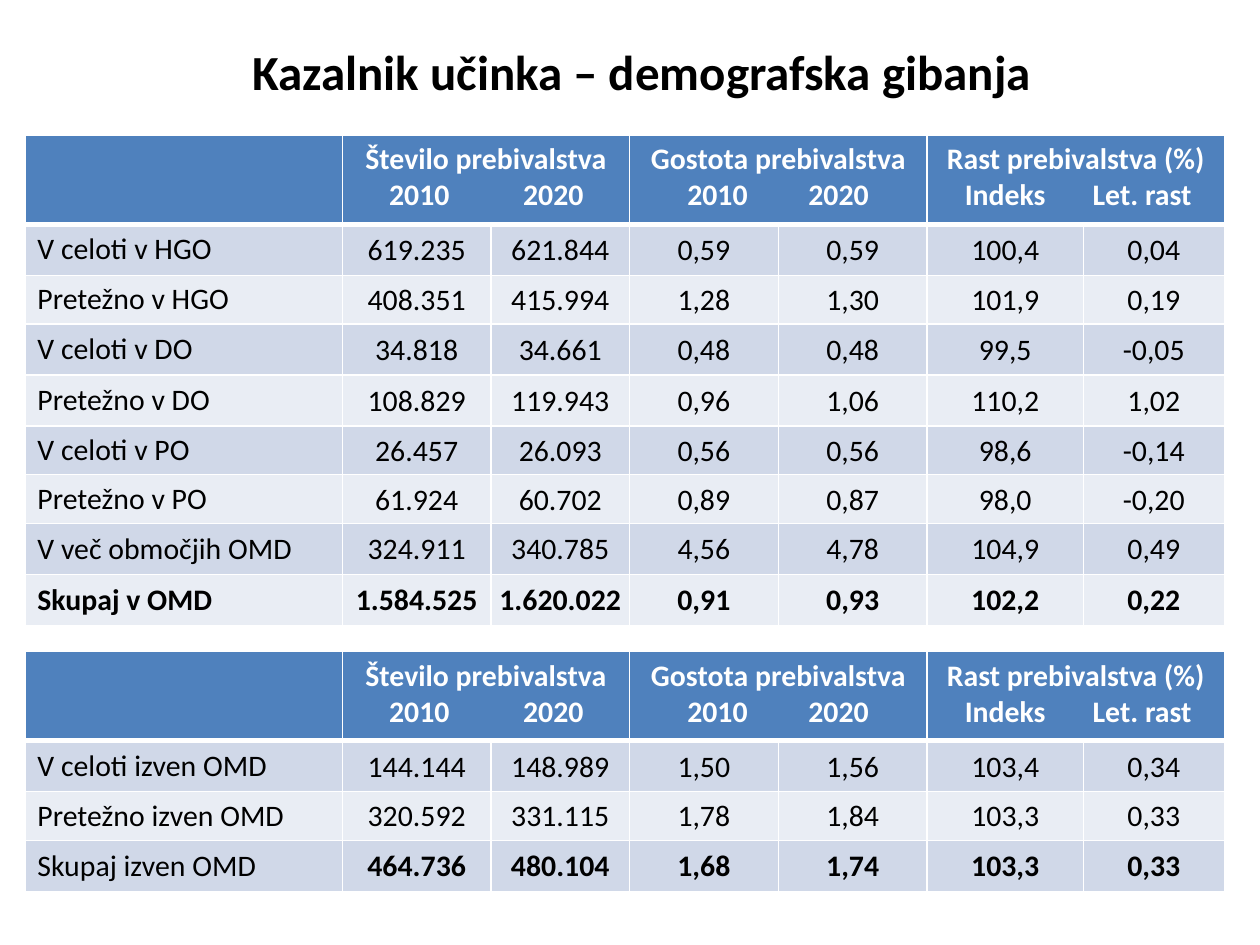
import pptx
import pptx.dml.color
import pptx.enum.text
import pptx.util
from lxml import etree
from pptx.oxml.ns import qn

Cm = pptx.util.Cm
Pt = pptx.util.Pt
ALIGN = pptx.enum.text.PP_ALIGN
MIDDLE = pptx.enum.text.MSO_ANCHOR.MIDDLE

COLORS = {
    "header": "4F81BD",
    "odd": "D0D8E8",
    "even": "E9EDF4",
    "white": "FFFFFF",
    "black": "000000",
}
COL_WIDTHS = [6.4, 3, 2.79, 3, 3, 3.15, 2.84]
HEADER_HEIGHT = 1.8
TALL, SHORT = 1.03, 0.98
HEADERS = [
    ("Število prebivalstva", ("2010", "2020"), (1.3, 4)),
    ("Gostota prebivalstva", ("2010", "2020"), (1.52, 3.96)),
    ("Rast prebivalstva (%)", ("Indeks", "Let. rast"), (1.32, 4.08)),
]
INSIDE_ROWS = [
    ("V celoti v HGO", "619.235", "621.844", "0,59", "0,59", "100,4", "0,04"),
    ("Pretežno v HGO", "408.351", "415.994", "1,28", "1,30", "101,9", "0,19"),
    ("V celoti v DO", "34.818", "34.661", "0,48", "0,48", "99,5", "-0,05"),
    ("Pretežno v DO", "108.829", "119.943", "0,96", "1,06", "110,2", "1,02"),
    ("V celoti v PO", "26.457", "26.093", "0,56", "0,56", "98,6", "-0,14"),
    ("Pretežno v PO", "61.924", "60.702", "0,89", "0,87", "98,0", "-0,20"),
    ("V več območjih OMD", "324.911", "340.785", "4,56", "4,78", "104,9", "0,49"),
    ("Skupaj v OMD", "1.584.525", "1.620.022", "0,91", "0,93", "102,2", "0,22"),
]
OUTSIDE_ROWS = [
    ("V celoti izven OMD", "144.144", "148.989", "1,50", "1,56", "103,4", "0,34"),
    ("Pretežno izven OMD", "320.592", "331.115", "1,78", "1,84", "103,3", "0,33"),
    ("Skupaj izven OMD", "464.736", "480.104", "1,68", "1,74", "103,3", "0,33"),
]


def rgb(name):
    return pptx.dml.color.RGBColor.from_string(COLORS[name])


def write(p, text, size=17, color="black", bold=False, align=ALIGN.CENTER):
    p.alignment = align
    r = p.add_run()
    r.text = text
    r.font.name = "Calibri"
    r.font.size = Pt(size)
    r.font.bold = bold
    r.font.color.rgb = rgb(color)


def add_center_tabs(p, positions):
    tabs = etree.SubElement(p._p.get_or_add_pPr(), qn("a:tabLst"))
    for position in positions:
        etree.SubElement(tabs, qn("a:tab"), pos=str(Cm(position)), algn="ctr")


def style_cell(cell, fill, top=1, bottom=1):
    tc_pr = cell._tc.get_or_add_tcPr()
    for side, width in (("L", 1), ("R", 1), ("T", top), ("B", bottom)):
        line = etree.SubElement(tc_pr, qn("a:ln" + side), w=str(Pt(width)))
        solid = etree.SubElement(line, qn("a:solidFill"))
        etree.SubElement(solid, qn("a:srgbClr"), val=COLORS["white"])
    cell.fill.solid()
    cell.fill.fore_color.rgb = rgb(fill)


def add_header(table):
    for cell in table.rows[0].cells:
        style_cell(cell, "header", bottom=3)
    for i, (title, labels, positions) in enumerate(HEADERS):
        col = 1 + 2 * i
        cell = table.cell(0, col)
        cell.merge(table.cell(0, col + 1))
        tf = cell.text_frame
        write(tf.paragraphs[0], title, color="white", bold=True)
        p = tf.add_paragraph()
        add_center_tabs(p, positions)
        write(p, "\t" + "\t".join(labels), color="white", bold=True, align=ALIGN.LEFT)


def add_body_row(table, row, values, bold_label, bold_values):
    for col, text in enumerate(values):
        cell = table.cell(row, col)
        style_cell(cell, "odd" if row % 2 else "even", top=3 if row == 1 else 1)
        cell.vertical_anchor = MIDDLE
        p = cell.text_frame.paragraphs[0]
        if col == 0:
            write(p, text, bold=bold_label, align=ALIGN.LEFT)
        else:
            cell.margin_left = cell.margin_right = cell.margin_top = Cm(0.03)
            cell.margin_bottom = 0
            write(p, text, bold=bold_values)


def add_population_table(s, top, rows, short_rows, bold_total_label):
    heights = [HEADER_HEIGHT]
    heights += [SHORT if i in short_rows else TALL for i in range(1, len(rows) + 1)]
    table = s.shapes.add_table(
        len(heights), len(COL_WIDTHS), Cm(0.5), Cm(top),
        Cm(sum(COL_WIDTHS)), Cm(sum(heights)),
    ).table
    table.horz_banding = False
    for column, width in zip(table.columns, COL_WIDTHS):
        column.width = Cm(width)
    for row, height in zip(table.rows, heights):
        row.height = Cm(height)
    add_header(table)
    for i, values in enumerate(rows, 1):
        total = i == len(rows)
        add_body_row(table, i, values, total and bold_total_label, total)


def add_title(s, text):
    sp = s.shapes.add_textbox(Cm(1.5), Cm(0.74), Cm(22.86), Cm(1.4))
    tf = sp.text_frame
    tf.word_wrap = True
    tf.vertical_anchor = MIDDLE
    write(tf.paragraphs[0], text, size=28, bold=True)


def main():
    prs = pptx.Presentation()
    prs.slide_width, prs.slide_height = Cm(25.4), Cm(19.05)
    s = prs.slides.add_slide(prs.slide_layouts[6])
    add_title(s, "Kazalnik učinka – demografska gibanja")
    add_population_table(s, 2.72, INSIDE_ROWS, {2, 5, 6}, True)
    add_population_table(s, 13.13, OUTSIDE_ROWS, {2}, False)
    prs.save("out.pptx")


if __name__ == "__main__":
    main()
